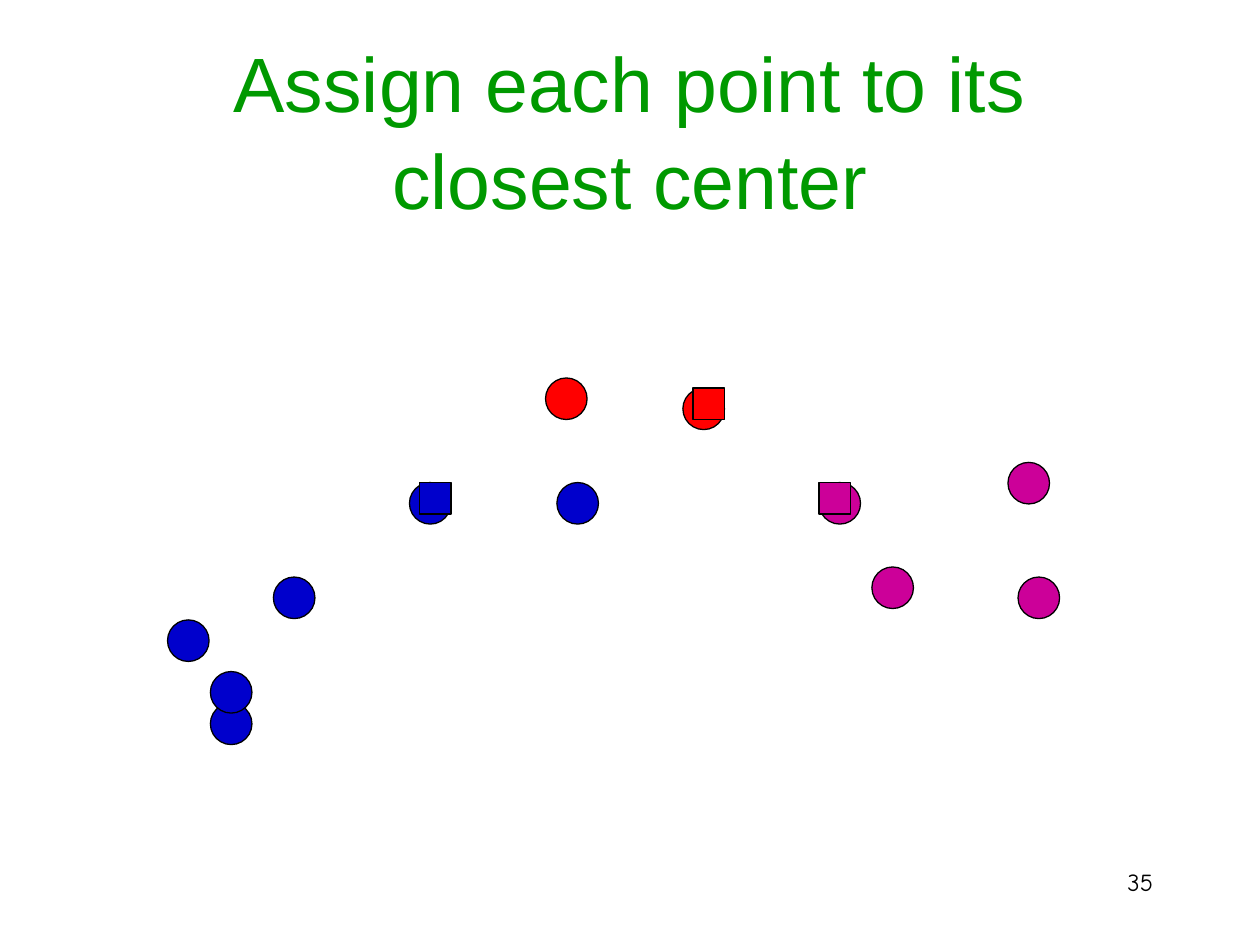
from pptx import Presentation
from pptx.dml.color import RGBColor
from pptx.enum.shapes import MSO_SHAPE
from pptx.enum.text import MSO_ANCHOR, MSO_AUTO_SIZE, PP_ALIGN
from pptx.util import Inches, Pt

OVAL, SQUARE = MSO_SHAPE.OVAL, MSO_SHAPE.RECTANGLE
MIDDLE, TOP = MSO_ANCHOR.MIDDLE, MSO_ANCHOR.TOP
CENTER, RIGHT = PP_ALIGN.CENTER, PP_ALIGN.RIGHT
NO_FIT = MSO_AUTO_SIZE.NONE

THEME = {
    "background": RGBColor(0xFF, 0xFF, 0xFF),
    "outline": RGBColor(0, 0, 0),
    "outline_width": Pt(0.75),
    "blue": RGBColor(0x00, 0x00, 0xCC),
    "red": RGBColor(0xFF, 0x00, 0x00),
    "magenta": RGBColor(0xCC, 0x00, 0x99),
    "title": {"name": "Arial", "size": Pt(44), "color": RGBColor(0x00, 0x99, 0x00)},
    "number": {"name": "Comic Neue", "size": Pt(14), "color": RGBColor(0, 0, 0)},
}


def write_text(shape, text, style, alignment, anchor):
    frame = shape.text_frame
    for name, value in {"word_wrap": True, "auto_size": NO_FIT, "vertical_anchor": anchor}.items():
        setattr(frame, name, value)
    paragraph = frame.paragraphs[0]
    paragraph.alignment = alignment
    run = paragraph.add_run()
    run.text = text
    for name in ("name", "size"):
        setattr(run.font, name, style[name])
    run.font.color.rgb = style["color"]
    return paragraph


presentation = Presentation()
presentation.slide_width = Inches(10)
presentation.slide_height = Inches(7.5)
slide = presentation.slides.add_slide(presentation.slide_layouts[5])
slide.background.fill.solid()
slide.background.fill.fore_color.rgb = THEME["background"]

title = slide.shapes.title
title_box = {"left": 0.75, "top": 0.39, "width": 8.5, "height": 1.25}
for name, value in title_box.items():
    setattr(title, name, Inches(value))
heading = write_text(title, "Assign each point to its closest center", THEME["title"], CENTER, MIDDLE)
heading.line_spacing = 1.05

number = slide.shapes.add_textbox(Inches(7.17), Inches(6.83), Inches(2.08), Inches(0.5))
write_text(number, "35", THEME["number"], RIGHT, TOP)

points = [
    (1.67, 5.58, "blue"),
    (1.33, 4.92, "blue"),
    (2.17, 4.58, "blue"),
    (8, 3.67, "magenta"),
    (4.33, 3, "red"),
    (5.42, 3.08, "red"),
    (4.42, 3.83, "blue"),
    (3.25, 3.83, "blue"),
    (8.08, 4.58, "magenta"),
    (6.5, 3.83, "magenta"),
    (1.67, 5.33, "blue"),
    (6.92, 4.5, "magenta"),
]
centers = [(3.33, 3.83, "blue"), (5.5, 3.08, "red"), (6.5, 3.83, "magenta")]

for kind, size, markers in ((OVAL, 0.33, points), (SQUARE, 0.25, centers)):
    for left, top, cluster in markers:
        marker = slide.shapes.add_shape(kind, Inches(left), Inches(top), Inches(size), Inches(size))
        marker.shadow.inherit = False
        marker.fill.solid()
        marker.fill.fore_color.rgb = THEME[cluster]
        marker.line.color.rgb = THEME["outline"]
        marker.line.width = THEME["outline_width"]

presentation.save("out.pptx")
